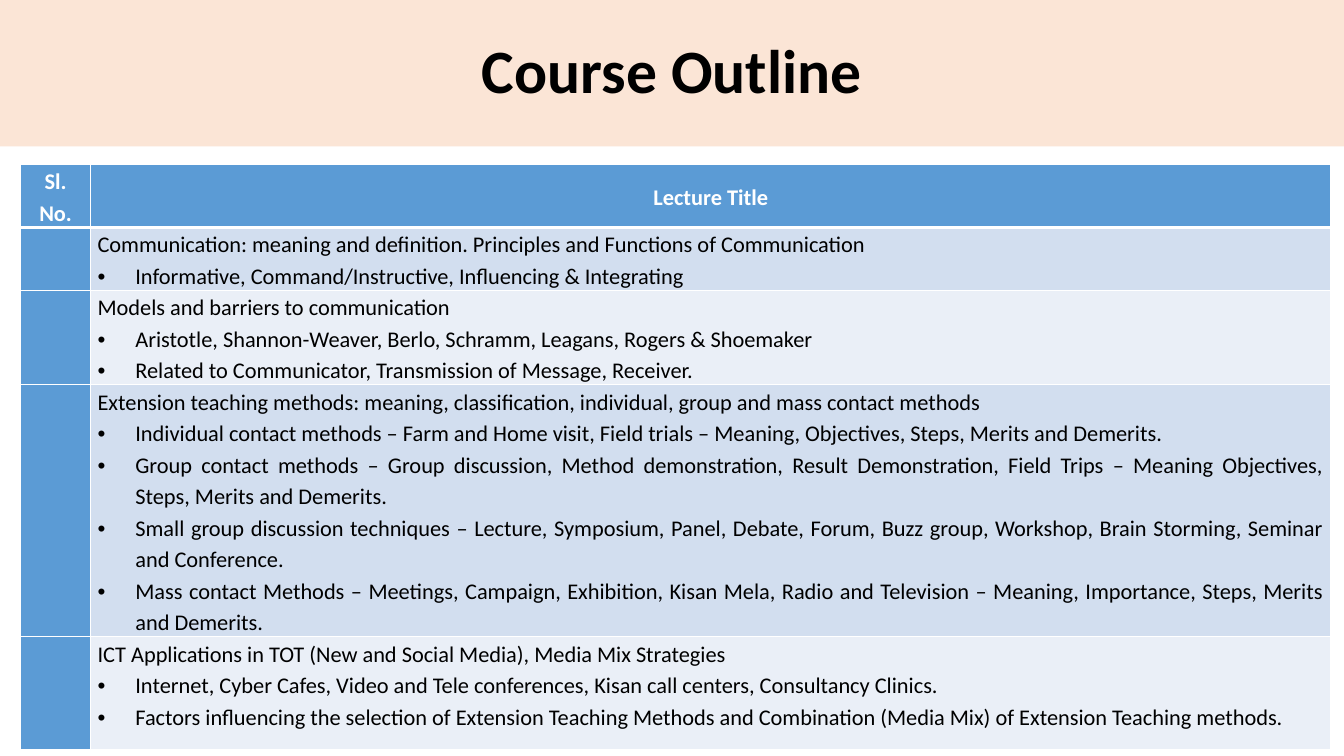
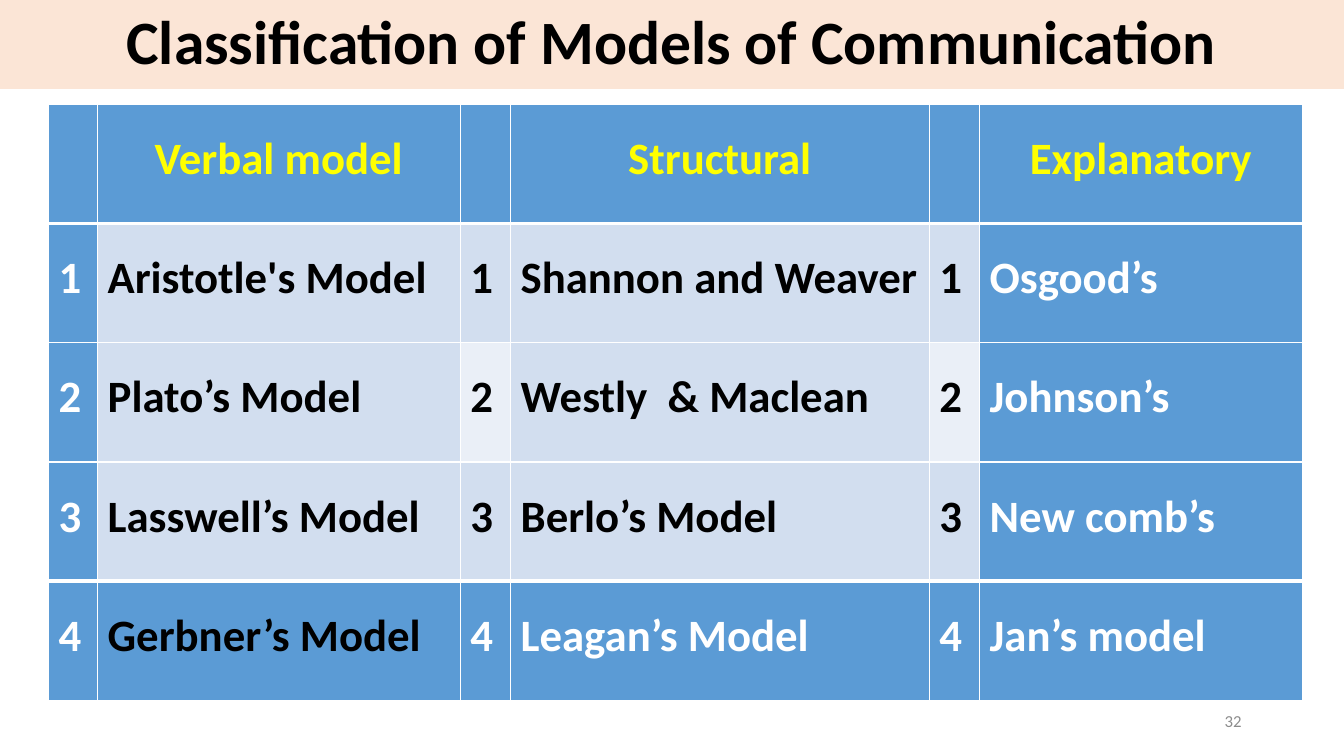
from lxml import etree
from pptx import Presentation
from pptx.dml.color import RGBColor
from pptx.enum import shapes, text
from pptx.oxml import ns
from pptx.util import Pt

SLIDE_WIDTH, SLIDE_HEIGHT = 960, 540
FONT = "Calibri"
COLORS = {
    "band": "FBE5D6",
    "blue": "5B9BD5",
    "pale": "D2DEEF",
    "light": "EAEFF7",
    "white": "FFFFFF",
    "black": "000000",
    "yellow": "FFFF00",
    "gray": "8C8C8C",
}
ALIGN = text.PP_ALIGN
ANCHOR = text.MSO_ANCHOR

LECTURES = [
    ("Communication: meaning and definition. Principles and Functions of Communication",
     ["Informative, Command/Instructive, Influencing & Integrating"]),
    ("Models and barriers to communication",
     ["Aristotle, Shannon-Weaver, Berlo, Schramm, Leagans, Rogers & Shoemaker",
      "Related to Communicator, Transmission of Message, Receiver."]),
    ("Extension teaching methods: meaning, classification, individual, group and mass "
     "contact methods",
     ["Individual contact methods – Farm and Home visit, Field trials – Meaning, "
      "Objectives, Steps, Merits and Demerits.",
      "Group contact methods – Group discussion, Method demonstration, Result "
      "Demonstration, Field Trips – Meaning Objectives, Steps, Merits and Demerits.",
      "Small group discussion techniques – Lecture, Symposium, Panel, Debate, Forum, "
      "Buzz group, Workshop, Brain Storming, Seminar and Conference.",
      "Mass contact Methods – Meetings, Campaign, Exhibition, Kisan Mela, Radio and "
      "Television – Meaning, Importance, Steps, Merits and Demerits."]),
    ("ICT Applications in TOT (New and Social Media), Media Mix Strategies",
     ["Internet, Cyber Cafes, Video and Tele conferences, Kisan call centers, "
      "Consultancy Clinics.",
      "Factors influencing the selection of Extension Teaching Methods and Combination "
      "(Media Mix) of Extension Teaching methods."]),
]

MODELS = {
    "Verbal model": ["Aristotle's Model", "Plato’s Model", "Lasswell’s Model",
                     "Gerbner’s Model"],
    "Structural": ["Shannon and Weaver", "Westly  & Maclean", "Berlo’s Model",
                   "Leagan’s Model"],
    "Explanatory": ["Osgood’s", "Johnson’s", "New comb’s", "Jan’s model"],
}


def rgb(color):
    return RGBColor.from_string(COLORS[color])


def add_bullet(paragraph, indent):
    properties = paragraph._p.get_or_add_pPr()
    properties.set("marL", str(Pt(indent)))
    properties.set("indent", str(Pt(-indent)))
    etree.SubElement(properties, ns.qn("a:buFont")).set("typeface", "Arial")
    etree.SubElement(properties, ns.qn("a:buChar")).set("char", "•")


def write(frame, words, size=16, color="black", bold=False, align=ALIGN.LEFT,
          spacing=1.0, bullet_indent=0):
    """Add one paragraph, using the frame's first one while it is empty."""
    paragraph = frame.paragraphs[0]
    if paragraph.runs:
        paragraph = frame.add_paragraph()
    paragraph.alignment = align
    paragraph.line_spacing = spacing
    if bullet_indent:
        add_bullet(paragraph, bullet_indent)
    run = paragraph.add_run()
    run.text = words
    run.font.name = FONT
    run.font.size = Pt(size)
    run.font.bold = bold
    run.font.color.rgb = rgb(color)


def add_title_band(slide, title, height):
    band = slide.shapes.add_shape(shapes.MSO_SHAPE.RECTANGLE, 0, 0,
                                  Pt(SLIDE_WIDTH), Pt(height))
    band.shadow.inherit = False
    band.fill.solid()
    band.fill.fore_color.rgb = rgb("band")
    band.line.fill.background()
    band.text_frame.word_wrap = True
    band.text_frame.vertical_anchor = ANCHOR.MIDDLE
    write(band.text_frame, title, size=44, bold=True, align=ALIGN.CENTER, spacing=0.9)


def add_page_number(slide, number, left, top, width, height):
    box = slide.shapes.add_textbox(Pt(left), Pt(top), Pt(width), Pt(height))
    box.text_frame.word_wrap = True
    box.text_frame.vertical_anchor = ANCHOR.MIDDLE
    write(box.text_frame, number, size=12, color="gray", align=ALIGN.RIGHT)


def add_grid(slide, left, top, columns, rows):
    frame = slide.shapes.add_table(len(rows), len(columns), Pt(left), Pt(top),
                                   Pt(sum(columns)), Pt(sum(rows)))
    table = frame.table
    table.horz_banding = False
    for column, width in zip(table.columns, columns):
        column.width = Pt(width)
    for row, height in zip(table.rows, rows):
        row.height = Pt(height)
    return table


def style_cell(cell, fill, inset, top_line=1, bottom_line=1, anchor=ANCHOR.TOP):
    cell.margin_left = cell.margin_right = Pt(inset)
    cell.margin_top = cell.margin_bottom = 0
    cell.vertical_anchor = anchor
    properties = cell._tc.get_or_add_tcPr()
    for side, width in (("L", 1), ("R", 1), ("T", top_line), ("B", bottom_line)):
        line = etree.SubElement(properties, ns.qn(f"a:ln{side}"), w=str(Pt(width)))
        line_fill = etree.SubElement(line, ns.qn("a:solidFill"))
        etree.SubElement(line_fill, ns.qn("a:srgbClr"), val=COLORS["white"])
    cell.fill.solid()
    cell.fill.fore_color.rgb = rgb(fill)


def add_lecture_table(slide, left, top, columns, rows):
    table = add_grid(slide, left, top, columns, rows)
    for index, heading in enumerate(["Sl. No.", "Lecture Title"]):
        cell = table.cell(0, index)
        style_cell(cell, "blue", 5, bottom_line=3, anchor=ANCHOR.MIDDLE)
        write(cell.text_frame, heading, color="white", bold=True,
              align=ALIGN.CENTER, spacing=1.15)
    for row, (lecture, topics) in enumerate(LECTURES, start=1):
        top_line = 3 if row == 1 else 1
        number_cell, lecture_cell = table.cell(row, 0), table.cell(row, 1)
        style_cell(number_cell, "blue", 5, top_line)
        style_cell(lecture_cell, "pale" if row % 2 else "light", 5, top_line)
        write(lecture_cell.text_frame, lecture, align=ALIGN.JUSTIFY, spacing=1.15)
        for topic in topics:
            write(lecture_cell.text_frame, topic, align=ALIGN.JUSTIFY, spacing=1.15,
                  bullet_indent=27)


def model_fill(row, column, last_row, last_column):
    if row in (0, last_row) or column in (0, last_column):
        return "blue"
    is_number = column % 2 == 0
    return "light" if is_number and row % 2 == 0 else "pale"


def add_model_table(slide, left, top, columns, rows):
    """Fill pairs of columns: a number, then a model of one class."""
    table = add_grid(slide, left, top, columns, rows)
    classes = list(MODELS.items())
    last_row, last_column = len(rows) - 1, len(columns) - 1
    for row in range(len(rows)):
        for column in range(len(columns)):
            heading, models = classes[column // 2]
            is_number = column % 2 == 0
            fill = model_fill(row, column, last_row, last_column)
            cell = table.cell(row, column)
            style_cell(cell, fill, 7.2,
                       top_line=3 if row in (1, last_row) else 1,
                       bottom_line=3 if row in (0, last_row - 1) else 1)
            if row == 0:
                words, color, align = heading, "yellow", ALIGN.CENTER
                if is_number:
                    continue
            else:
                words = str(row) if is_number else models[row - 1]
                color = "white" if fill == "blue" and column != 1 else "black"
                align = ALIGN.JUSTIFY
            write(cell.text_frame, words, size=32, color=color, bold=True,
                  align=align, spacing=1.5)


def add_outline_slide(slide):
    add_title_band(slide, "Course Outline", 104.5)
    add_lecture_table(slide, 14.75, 117.5, columns=[50, 886],
                      rows=[40, 40, 61, 164, 81])


def add_models_slide(slide):
    add_title_band(slide, "Classification of Models of Communication", 63.5)
    add_model_table(slide, 34.75, 74.5, columns=[35, 259, 36, 299, 36, 230.5],
                    rows=[85.2] * 5)
    add_page_number(slide, "32", 678, 500.5, 216, 28.75)


def main():
    presentation = Presentation()
    presentation.slide_width = Pt(SLIDE_WIDTH)
    presentation.slide_height = Pt(SLIDE_HEIGHT)
    blank = presentation.slide_layouts[6]
    for build in (add_outline_slide, add_models_slide):
        build(presentation.slides.add_slide(blank))
    presentation.save("out.pptx")


if __name__ == "__main__":
    main()
